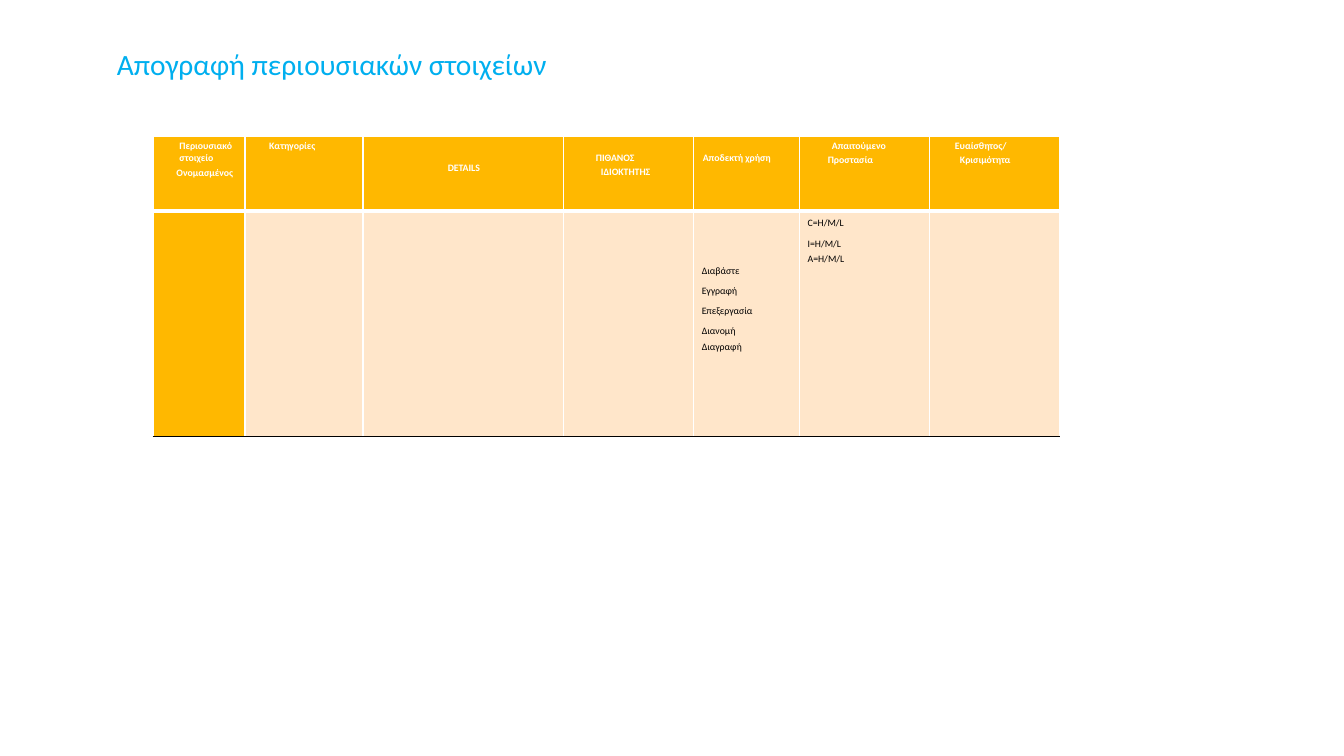
from dataclasses import dataclass

from lxml.etree import SubElement
from pptx import Presentation
from pptx.dml.color import RGBColor
from pptx.enum.text import MSO_ANCHOR, PP_ALIGN
from pptx.oxml.ns import qn
from pptx.util import Inches, Pt


@dataclass(frozen=True)
class Theme:
    font: str = "Calibri"
    title_size: float = 21
    table_size: float = 7
    title: str = "00AFEF"
    accent: str = "FFB800"
    body: str = "FFE6CA"
    light: str = "FFFFFF"
    dark: str = "000000"


@dataclass(frozen=True)
class Line:
    text: str
    indent: float = 0  # grid columns
    before: float = 0  # points
    align: PP_ALIGN = PP_ALIGN.LEFT


def column(count):
    """Hundredths of the slide width."""
    return Inches(13.33 * count / 100)


def row(count):
    """Hundredths of the slide height."""
    return Inches(7.5 * count / 100)


def write(para, text, *, font, size, color, bold=False, indent=0, before=0,
          align=PP_ALIGN.LEFT):
    para.alignment = align
    if before:
        para.space_before = Pt(before)
    para._p.get_or_add_pPr().set("marL", str(column(indent)))
    span = para.add_run()
    span.text = text
    span.font.name = font
    span.font.size = Pt(size)
    span.font.bold = bold
    span.font.color.rgb = RGBColor.from_string(color)


class SlideBuilder:
    def __init__(self, deck, theme):
        self.theme = theme
        self.page = deck.slides.add_slide(deck.slide_layouts[6])

    def heading(self, text, left, top, width, height):
        box = self.page.shapes.add_textbox(column(left), row(top), column(width), row(height))
        frame = box.text_frame
        frame.word_wrap = True
        frame.margin_left = frame.margin_right = frame.margin_bottom = 0
        frame.margin_top = row(0.13)
        write(frame.paragraphs[0], text, font=self.theme.font,
              size=self.theme.title_size, color=self.theme.title)

    def border(self, cell, edges):
        """Edges are (side, colour, points), in the order L, R, T, B."""
        properties = cell._tc.get_or_add_tcPr()
        for position, (side, color, points) in enumerate(edges):
            line = SubElement(properties, qn(f"a:ln{side}"), w=str(Pt(points)))
            fill = SubElement(line, qn("a:solidFill"))
            SubElement(fill, qn("a:srgbClr"), val=color)
            properties.insert(position, line)

    def fill_cell(self, cell, lines, fill, color, bold, top):
        cell.fill.solid()
        cell.fill.fore_color.rgb = RGBColor.from_string(fill)
        cell.margin_left = cell.margin_right = cell.margin_bottom = 0
        cell.margin_top = row(top)
        cell.vertical_anchor = MSO_ANCHOR.TOP
        frame = cell.text_frame
        for number, line in enumerate(lines):
            para = frame.add_paragraph() if number else frame.paragraphs[0]
            write(para, line.text, font=self.theme.font, size=self.theme.table_size,
                  color=color, bold=bold, indent=line.indent, before=line.before,
                  align=line.align)

    def table(self, left, top, widths, heights, header, body):
        theme = self.theme
        grid = self.page.shapes.add_table(
            len(heights), len(widths), column(left), row(top),
            column(sum(widths)), row(sum(heights))).table
        grid.horz_banding = False
        for target, width in zip(grid.columns, widths):
            target.width = column(width)
        for target, height in zip(grid.rows, heights):
            target.height = row(height)

        sides = [("L", theme.light, 1), ("R", theme.light, 1)]
        header_edges = sides + [("T", theme.light, 1), ("B", theme.light, 3)]
        body_edges = sides + [("T", theme.light, 3), ("B", theme.dark, 1)]
        for index in range(len(widths)):
            space, lines = header[index]
            cell = grid.cell(0, index)
            self.fill_cell(cell, lines, theme.accent, theme.light, True, space)
            self.border(cell, header_edges)

            space, lines = body.get(index, (0, []))
            cell = grid.cell(1, index)
            fill = theme.body if index else theme.accent
            self.fill_cell(cell, lines, fill, theme.dark, False, space)
            self.border(cell, body_edges)


# Each cell: space above its text in grid rows, then its lines
HEADER = [
    (0.53, [Line("Περιουσιακό", 1.95), Line("στοιχείο", 1.95),
            Line("Ονομασμένος", 1.73, 2)]),
    (0.6, [Line("Κατηγορίες", 1.8)]),
    (3.47, [Line("DETAILS", 0.08, align=PP_ALIGN.CENTER)]),
    (2.13, [Line("ΠΙΘΑΝΟΣ", 2.4), Line("ΙΔΙΟΚΤΗΤΗΣ", 2.78, 1.4)]),
    (2.13, [Line("Αποδεκτή χρήση", 0.68)]),
    (0.53, [Line("Απαιτούμενο", 2.4), Line("Προστασία", 2.1, 1.9)]),
    (0.53, [Line("Ευαίσθητος/", 1.88), Line("Κρισιμότητα", 2.25, 1.9)]),
]
BODY = {
    4: (7.2, [Line("Διαβάστε", 0.6), Line("Εγγραφή", 0.6, 5.8),
              Line("Επεξεργασία", 0.6, 5.8), Line("Διανομή", 0.6, 5.8),
              Line("Διαγραφή", 0.6, 2.8)]),
    5: (0.93, [Line("C=H/M/L", 0.6), Line("I=H/M/L", 0.6, 5.8),
               Line("A=H/M/L", 0.6, 2.8)]),
}


def main():
    deck = Presentation()
    deck.slide_width, deck.slide_height = column(100), row(100)
    slide = SlideBuilder(deck, Theme())

    # Title
    slide.heading("Απογραφή περιουσιακών στοιχείων", 8.7, 6, 34.43, 5.07)

    # Asset inventory
    slide.table(11.4, 18, [6.83, 8.78, 14.93, 9.68, 7.88, 9.68, 9.68],
                [9.87, 29.87], HEADER, BODY)

    deck.save("out.pptx")


if __name__ == "__main__":
    main()
